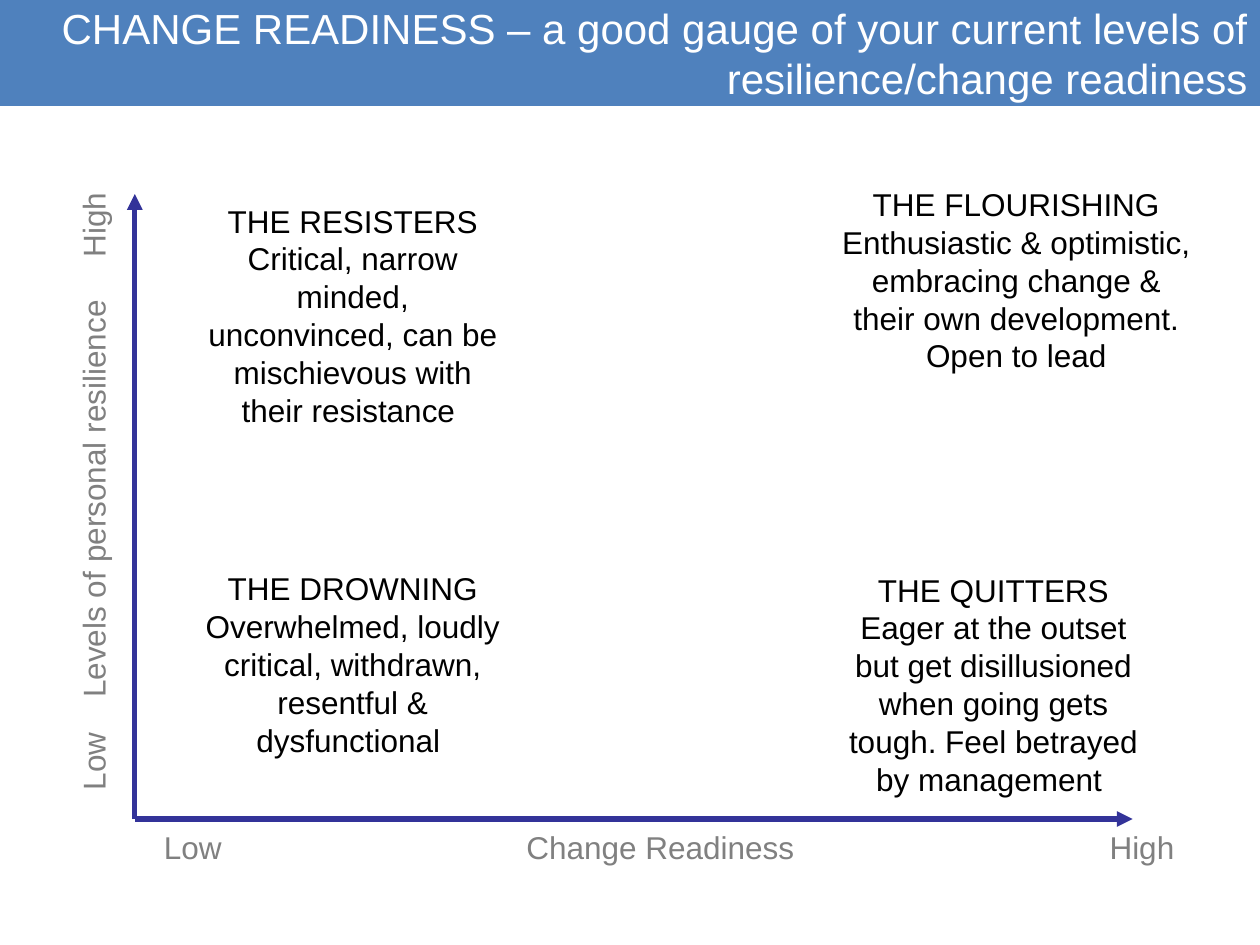
from dataclasses import dataclass

from lxml import etree
from pptx import Presentation
from pptx.dml.color import RGBColor
from pptx.enum.shapes import MSO_CONNECTOR, MSO_SHAPE
from pptx.enum.text import MSO_ANCHOR, PP_ALIGN
from pptx.oxml.ns import qn
from pptx.util import Inches, Pt

STRAIGHT = MSO_CONNECTOR.STRAIGHT
RECTANGLE = MSO_SHAPE.RECTANGLE
MIDDLE = MSO_ANCHOR.MIDDLE
LEFT, CENTER, RIGHT = PP_ALIGN.LEFT, PP_ALIGN.CENTER, PP_ALIGN.RIGHT


@dataclass(frozen=True)
class Theme:
    font: str = "Arial"
    banner: RGBColor = RGBColor(0x4F, 0x81, 0xBD)
    banner_text: RGBColor = RGBColor(0xFF, 0xFF, 0xFF)
    axis: RGBColor = RGBColor(0x33, 0x33, 0x99)
    axis_text: RGBColor = RGBColor(0x80, 0x80, 0x80)
    body_text: RGBColor = RGBColor(0, 0, 0)
    title_size: Pt = Pt(24)
    body_size: Pt = Pt(18)
    axis_width: Pt = Pt(3)


THEME = Theme()
SLIDE_W, SLIDE_H = 10, 7.5
LABEL_H = 0.4

# Quadrants: heading, description, box (left, top, width, height)
LEFT_COLUMN, COLUMN_W = 1.5, 2.6
QUADRANTS = [
    ("THE RESISTERS",
     "Critical, narrow minded, unconvinced, can be mischievous with "
     "their resistance ",
     (LEFT_COLUMN, 1.55, COLUMN_W, 1.92)),
    ("THE FLOURISHING",
     "Enthusiastic & optimistic, embracing change & their own development. "
     "Open to lead",
     (6.57, 1.42, 2.99, 1.62)),
    ("THE DROWNING",
     "Overwhelmed, loudly critical, withdrawn, resentful & dysfunctional ",
     (LEFT_COLUMN, 4.47, COLUMN_W, 1.62)),
    ("THE QUITTERS",
     "Eager at the outset but get disillusioned when going gets tough. "
     "Feel betrayed by management ",
     (6.62, 4.48, 2.53, 1.92)),
]


def inches(*lengths):
    return [Inches(length) for length in lengths]


def write(paragraph, text, size, color, align):
    paragraph.alignment = align
    run = paragraph.add_run()
    run.text = text
    run.font.name = THEME.font
    run.font.size = size
    run.font.color.rgb = color


def add_banner(shapes, box, title):
    banner = shapes.add_shape(RECTANGLE, *inches(*box))
    banner.shadow.inherit = False
    banner.fill.solid()
    banner.fill.fore_color.rgb = THEME.banner
    banner.line.fill.background()
    frame = banner.text_frame
    frame.word_wrap = True
    frame.vertical_anchor = MIDDLE
    write(frame.paragraphs[0], title, THEME.title_size, THEME.banner_text, RIGHT)


def add_arrow(shapes, start, end):
    arrow = shapes.add_connector(STRAIGHT, *inches(*start, *end))
    arrow.line.color.rgb = THEME.axis
    arrow.line.width = THEME.axis_width
    line = arrow.line._get_or_add_ln()
    etree.SubElement(line, qn("a:tailEnd"), type="triangle")
    etree.SubElement(arrow._element.spPr, qn("a:effectLst"))


def add_axis_label(shapes, box, words, inset, stops, rotation=0):
    """Low, axis name and High on one line, set by centre and right tabs."""
    label = shapes.add_textbox(*inches(*box))
    label.rotation = rotation
    frame = label.text_frame
    frame.word_wrap = True
    frame.margin_left = Inches(inset)
    paragraph = frame.paragraphs[0]
    write(paragraph, "\t".join(words), THEME.body_size, THEME.axis_text, LEFT)
    tabs = etree.SubElement(paragraph._p.get_or_add_pPr(), qn("a:tabLst"))
    for kind, stop in zip(("ctr", "r"), stops):
        etree.SubElement(tabs, qn("a:tab"), pos=str(Inches(stop)), algn=kind)


def add_axes(shapes, box):
    left, top, width, height = box
    origin = (left, top + height)
    axes = shapes.add_group_shape().shapes
    add_arrow(axes, origin, (left + width, top + height))
    add_arrow(axes, origin, (left, top))

    # Horizontal label, below the axis
    add_axis_label(axes, (left + 0.1, top + height + 0.02, 8.28, LABEL_H),
                   ("Low", "Change Readiness", "High"), 0.13, (3.94, 8.02))

    # Vertical label, turned about its centre
    length = 5.04
    center_x, center_y = left - 0.33, top + height / 2 - 0.12
    add_axis_label(axes, (center_x - length / 2, center_y - LABEL_H / 2,
                          length, LABEL_H),
                   ("Low", "Levels of personal resilience", "High"),
                   0.15, (2.31, 4.74), rotation=270)


def add_quadrant(shapes, box, heading, description):
    frame = shapes.add_textbox(*inches(*box)).text_frame
    frame.word_wrap = True
    for paragraph, text in ((frame.paragraphs[0], heading),
                            (frame.add_paragraph(), description)):
        write(paragraph, text, THEME.body_size, THEME.body_text, CENTER)


def main():
    deck = Presentation()
    deck.slide_width, deck.slide_height = inches(SLIDE_W, SLIDE_H)
    shapes = deck.slides.add_slide(deck.slide_layouts[6]).shapes

    add_axes(shapes, (1.07, 1.54, 7.92, 4.96))
    for heading, description, box in QUADRANTS:
        add_quadrant(shapes, box, heading, description)
    add_banner(shapes, (0, 0, SLIDE_W, 0.84),
               "CHANGE READINESS – a good gauge of your current levels of "
               "resilience/change readiness")

    deck.save("out.pptx")


if __name__ == "__main__":
    main()
